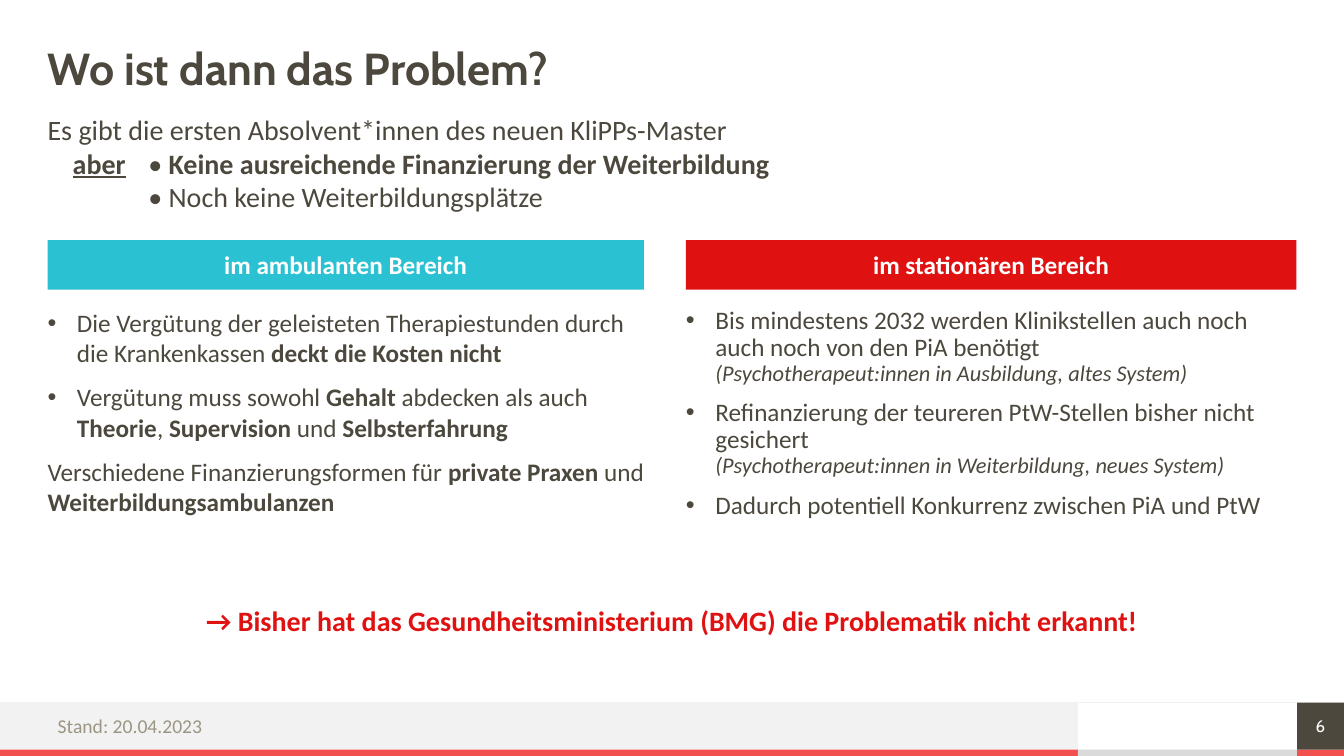
from lxml import etree
from pptx import Presentation
from pptx.dml.color import RGBColor
from pptx.enum.shapes import MSO_CONNECTOR, MSO_SHAPE
from pptx.enum.text import MSO_ANCHOR, MSO_AUTO_SIZE, PP_ALIGN
from pptx.oxml.ns import qn
from pptx.util import Pt

RECT = MSO_SHAPE.RECTANGLE
STRAIGHT = MSO_CONNECTOR.STRAIGHT
LEFT, CENTER = PP_ALIGN.LEFT, PP_ALIGN.CENTER
TOP, MIDDLE = MSO_ANCHOR.TOP, MSO_ANCHOR.MIDDLE
NO_FIT = MSO_AUTO_SIZE.NONE

SLIDE_W, SLIDE_H = 960, 540
MARGIN = 34
CONTENT_W = SLIDE_W - 2 * MARGIN
DARK, GREY, PALE, WHITE = "4C483D", "9B9583", "F2F2F2", "FFFFFF"
TEAL, RED, CORAL, SILVER = "2AC2D2", "E01111", "F24F4F", "DADADA"

PLAIN = {"size": 18, "name": "Calibri", "color": DARK}
BOLD = {"bold": True}
NOTE = {"italic": True, "size": 16}
BULLET = {"margin": 21, "indent": -21, "bullet": "•"}
BREAK = ("\n", {})

AMBULANT = [
    (BULLET, [("Die Vergütung der geleisteten Therapiestunden durch die Krankenkassen ", {}),
              ("deckt die Kosten nicht", BOLD)]),
    (BULLET, [("Vergütung muss sowohl ", {}), ("Gehalt", BOLD), (" abdecken als auch ", {}),
              ("Theorie", BOLD), (", ", {}), ("Supervision", BOLD), (" und ", {}),
              ("Selbsterfahrung", BOLD)]),
    ({}, [("Verschiedene Finanzierungsformen für ", {}), ("private Praxen", BOLD),
          (" und ", {}), ("Weiterbildungsambulanzen", BOLD)]),
]
STATIONAER = [
    (BULLET, [("Bis mindestens 2032 werden Klinikstellen auch noch auch noch von den PiA benötigt", {}),
              BREAK, ("(Psychotherapeut:innen in Ausbildung, altes System)", NOTE)]),
    (BULLET, [("Refinanzierung der teureren PtW-Stellen bisher nicht gesichert", {}),
              BREAK, ("(Psychotherapeut:innen in Weiterbildung, neues System)", NOTE)]),
    (BULLET, [("Dadurch potentiell Konkurrenz zwischen PiA und PtW", {})]),
]
INTRO = [
    ({}, [("Es gibt die ersten Absolvent*innen des neuen KliPPs-Master", {})]),
    ({"margin": 72, "indent": -54},
     [("aber", {"bold": True, "underline": True}), ("\t•", {}),
      (" Keine ausreichende Finanzierung der Weiterbildung", BOLD)]),
    ({"margin": 72}, [("• Noch keine Weiterbildungsplätze", {})]),
]


def rgb(hex_color):
    return RGBColor.from_string(hex_color)


def format_run(run, style):
    for key, value in style.items():
        if key == "color":
            run.font.color.rgb = rgb(value)
        else:
            setattr(run.font, key, Pt(value) if key == "size" else value)


def set_list_format(paragraph, margin=0, indent=0, bullet=None):
    properties = paragraph._p.get_or_add_pPr()
    properties.set("marL", str(Pt(margin)))
    properties.set("indent", str(Pt(indent)))
    if bullet:
        etree.SubElement(properties, qn("a:buChar")).set("char", bullet)
    else:
        etree.SubElement(properties, qn("a:buNone"))


def write(shape, paragraphs, base, align=LEFT, anchor=TOP, spacing=1.0, gap=0, inset=0):
    """Fill a shape with (list format, [(text, run style)]) paragraphs."""
    frame = shape.text_frame
    settings = {"word_wrap": True, "auto_size": NO_FIT, "vertical_anchor": anchor}
    settings.update({f"margin_{side}": Pt(inset) for side in ("left", "right", "top", "bottom")})
    for key, value in settings.items():
        setattr(frame, key, value)
    for number, (list_format, spans) in enumerate(paragraphs):
        paragraph = frame.add_paragraph() if number else frame.paragraphs[0]
        set_list_format(paragraph, **list_format)
        paragraph.alignment = align
        paragraph.line_spacing = spacing
        paragraph.space_before = Pt(gap if number else 0)
        for text, style in spans:
            if text == "\n":
                paragraph.add_line_break()
                continue
            run = paragraph.add_run()
            run.text = text
            format_run(run, {**base, **style})


def place(shape, box):
    for side, value in zip(("left", "top", "width", "height"), box):
        setattr(shape, side, Pt(value))


def add_bar(slide, box, color):
    bar = slide.shapes.add_shape(RECT, *map(Pt, box))
    bar.shadow.inherit = False
    bar.fill.solid()
    bar.fill.fore_color.rgb = rgb(color)
    bar.line.fill.background()
    return bar


def add_text(slide, box, text, base, **layout):
    write(slide.shapes.add_textbox(*map(Pt, box)), [({}, [(text, {})])], base, **layout)


def build_footer(slide, box, date, page):
    left, top, width, height = box
    strip = 4.5
    page_side = height - strip
    date_w = 770
    page_left = left + width - page_side
    strip_top = top + page_side
    add_bar(slide, (left, top, date_w, page_side), PALE)
    add_bar(slide, (left, strip_top, date_w, strip), CORAL)
    add_bar(slide, (left + date_w, strip_top, page_left - left - date_w, strip), SILVER)
    add_bar(slide, (page_left, strip_top, page_side, strip), CORAL)

    rule = slide.shapes.add_connector(STRAIGHT, Pt(left + width), Pt(top), Pt(left), Pt(top))
    rule.line.color.rgb = rgb(PALE)
    rule.line.width = Pt(0.5)
    etree.SubElement(rule._element.spPr, qn("a:effectLst"))

    add_text(slide, (left + MARGIN + 7.2, top + 5, 430, 23), date,
             {**PLAIN, "size": 14, "color": GREY}, anchor=MIDDLE)
    page_box = add_bar(slide, (page_left, top, page_side, page_side), DARK)
    write(page_box, [({}, [(page, {})])], {"size": 12, "name": "Cabin", "color": WHITE},
          align=CENTER, anchor=MIDDLE)


def build_column(slide, box, heading, color, body, points, spacing):
    left, top, width, height = box
    heading_h, body_offset = 35.5, 48
    heading_bar = add_bar(slide, (left, top, width, heading_h), color)
    write(heading_bar, [({}, [(heading, BOLD)])], {**PLAIN, "color": WHITE},
          align=CENTER, anchor=MIDDLE, inset=3.6)
    place(body, (left, top + body_offset, width, height - body_offset))
    write(body, points, PLAIN, spacing=spacing, gap=10)


def build_problem_slide(slide):
    title, ambulant_body, stationaer_body = slide.placeholders
    place(title, (MARGIN, 34, CONTENT_W, 34))
    write(title, [({}, [("Wo ist dann das Problem?", BOLD)])],
          {"size": 32, "name": "Cabin", "color": DARK}, anchor=MIDDLE, spacing=0.9)

    intro = slide.shapes.add_textbox(Pt(MARGIN), Pt(80.5), Pt(CONTENT_W), Pt(76))
    write(intro, INTRO, {**PLAIN, "size": 20})

    columns_top, columns_h = 171.5, 232
    build_column(slide, (MARGIN, columns_top, 426, columns_h), "im ambulanten Bereich",
                 TEAL, ambulant_body, AMBULANT, 1.0)
    build_column(slide, (490, columns_top, 436, columns_h), "im stationären Bereich",
                 RED, stationaer_body, STATIONAER, 0.9)

    add_text(slide, (MARGIN, 434, CONTENT_W, 38),
             "→ Bisher hat das Gesundheitsministerium (BMG) die Problematik nicht erkannt!",
             {**PLAIN, "size": 20, "color": RED, "bold": True}, align=CENTER, spacing=0.9)
    build_footer(slide, (0, 502, SLIDE_W, SLIDE_H - 502), "Stand: 20.04.2023", "6")


def main():
    deck = Presentation()
    deck.slide_width, deck.slide_height = Pt(SLIDE_W), Pt(SLIDE_H)
    two_content = deck.slide_layouts[3]
    build_problem_slide(deck.slides.add_slide(two_content))
    deck.save("out.pptx")


if __name__ == "__main__":
    main()
